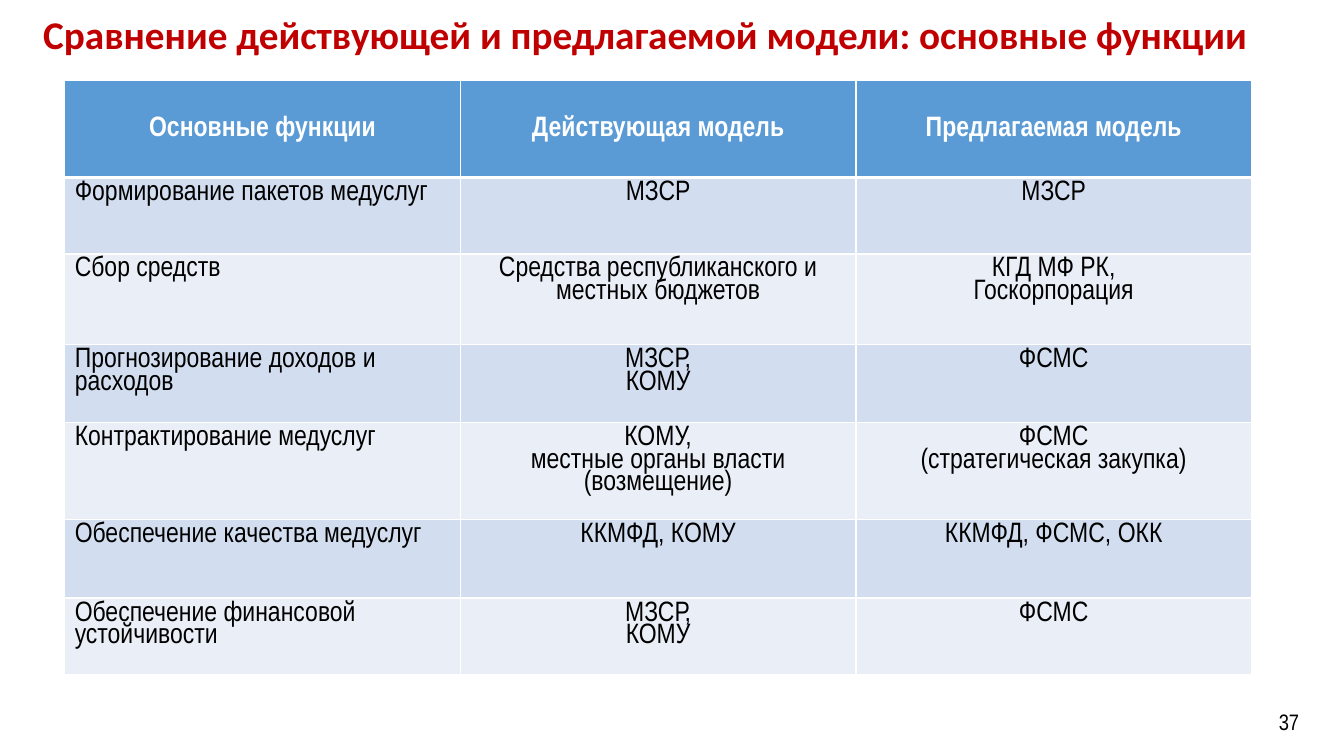
from lxml.etree import SubElement
from pptx import Presentation
from pptx.dml.color import RGBColor
from pptx.enum.text import MSO_ANCHOR as Anchor, PP_ALIGN as Align
from pptx.oxml.ns import qn
from pptx.util import Cm, Pt

RED = RGBColor(0xC0, 0x00, 0x00)
BLACK = RGBColor(0x00, 0x00, 0x00)
WHITE = RGBColor(0xFF, 0xFF, 0xFF)
BLUE = RGBColor(0x5B, 0x9B, 0xD5)
BAND_DARK = RGBColor(0xD2, 0xDE, 0xEF)
BAND_LIGHT = RGBColor(0xEA, 0xEF, 0xF7)

HEADER = ["Основные функции", "Действующая модель", "Предлагаемая модель"]
FUNCTIONS = [
    ["Формирование пакетов медуслуг", "МЗСР", "МЗСР"],
    ["Сбор средств", "Средства республиканского и местных бюджетов",
     "КГД МФ РК,\nГоскорпорация"],
    ["Прогнозирование доходов и расходов", "МЗСР,\nКОМУ", "ФСМС"],
    ["Контрактирование медуслуг", "КОМУ,\nместные органы власти (возмещение)",
     "ФСМС\n(стратегическая закупка)"],
    ["Обеспечение качества медуслуг", "ККМФД, КОМУ", "ККМФД, ФСМС, ОКК"],
    ["Обеспечение финансовой устойчивости", "МЗСР,\nКОМУ", "ФСМС"],
]
ROW_HEIGHTS = [2.44, 1.93, 2.29, 1.96, 2.44, 1.98, 1.93]
COLUMN_WIDTH = 9.97


def write(frame, text, size=20, font="Arial Narrow", color=BLACK, bold=False,
          align=Align.LEFT, spacing=None):
    frame.word_wrap = True
    for index, line in enumerate(text.split("\n")):
        para = frame.add_paragraph() if index else frame.paragraphs[0]
        para.alignment = align
        para.line_spacing = spacing
        span = para.add_run()
        span.text = line
        span.font.size = Pt(size)
        span.font.name = font
        span.font.color.rgb = color
        span.font.bold = bold


def set_borders(cell, bottom_width):
    properties = cell._tc.get_or_add_tcPr()
    widths = {"a:lnL": 1, "a:lnR": 1, "a:lnT": 1, "a:lnB": bottom_width}
    for side, width in widths.items():
        line = SubElement(properties, qn(side), w=str(Pt(width)))
        fill = SubElement(line, qn("a:solidFill"))
        SubElement(fill, qn("a:srgbClr"), val=str(WHITE))


deck = Presentation()
deck.slide_width, deck.slide_height = Cm(33.87), Cm(19.05)
page = deck.slides.add_slide(deck.slide_layouts[6])

title_box = page.shapes.add_textbox(Cm(0.84), Cm(0.13), Cm(32.64), Cm(1.6))
write(title_box.text_frame, "Сравнение действующей и предлагаемой модели: основные функции",
      size=28, font="Calibri", color=RED, bold=True)

number_box = page.shapes.add_textbox(Cm(30.81), Cm(17.68), Cm(2.18), Cm(1.02))
number_box.text_frame.vertical_anchor = Anchor.MIDDLE
write(number_box.text_frame, "37", size=16, align=Align.RIGHT)

table = page.shapes.add_table(len(ROW_HEIGHTS), len(HEADER), Cm(1.63), Cm(2.03),
                              Cm(COLUMN_WIDTH * len(HEADER)), Cm(sum(ROW_HEIGHTS))).table
for column in table.columns:
    column.width = Cm(COLUMN_WIDTH)
for row, height in zip(table.rows, ROW_HEIGHTS):
    row.height = Cm(height)

for row_index, texts in enumerate([HEADER] + FUNCTIONS):
    is_header = row_index == 0
    band = BAND_DARK if row_index % 2 else BAND_LIGHT
    for column_index, text in enumerate(texts):
        cell = table.cell(row_index, column_index)
        set_borders(cell, 3 if is_header else 1)
        cell.fill.solid()
        cell.fill.fore_color.rgb = BLUE if is_header else band
        cell.vertical_anchor = Anchor.MIDDLE if is_header else Anchor.TOP
        write(cell.text_frame, text, bold=is_header,
              color=WHITE if is_header else BLACK,
              align=Align.CENTER if is_header or column_index else Align.LEFT,
              spacing=None if is_header else 0.85)

deck.save("out.pptx")
